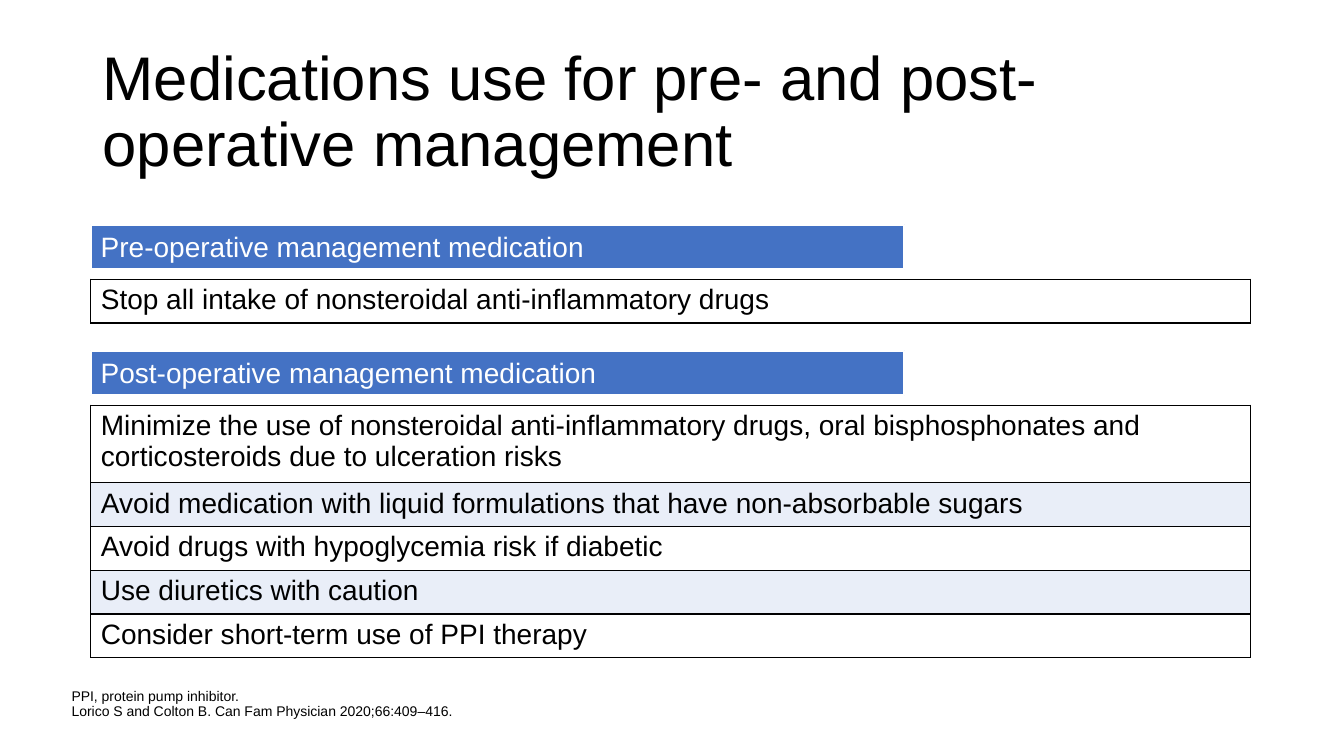
from copy import deepcopy

from lxml import etree
from pptx import Presentation
from pptx.dml.color import RGBColor
from pptx.enum.shapes import MSO_SHAPE
from pptx.enum.text import MSO_ANCHOR
from pptx.oxml.ns import qn
from pptx.util import Inches, Pt

RECTANGLE = MSO_SHAPE.RECTANGLE
TOP, MIDDLE, BOTTOM = MSO_ANCHOR.TOP, MSO_ANCHOR.MIDDLE, MSO_ANCHOR.BOTTOM
COLORS = {"black": "000000", "white": "FFFFFF", "header": "4472C4", "band": "E9EEF8"}
FONT = "Arial"
LEFT, WIDTH, HEADER_WIDTH = 0.9, 11.5, 8.07
HEADER_HEIGHT, TABLE_OFFSET = 0.44, 0.54
BORDER_SIDES = ("a:lnL", "a:lnR", "a:lnT", "a:lnB")

SECTIONS = [
    (2.23, "Pre-operative management medication", [
        (0.43, "Stop all intake of nonsteroidal anti-inflammatory drugs"),
    ]),
    (3.48, "Post-operative management medication", [
        (0.77, "Minimize the use of nonsteroidal anti-inflammatory drugs, "
               "oral bisphosphonates and corticosteroids due to ulceration risks"),
        (0.43, "Avoid medication with liquid formulations that have non-absorbable sugars"),
        (0.43, "Avoid drugs with hypoglycemia risk if diabetic"),
        (0.43, "Use diuretics with caution"),
        (0.43, "Consider short-term use of PPI therapy"),
    ]),
]


def rgb(name):
    """Return the named colour."""
    return RGBColor.from_string(COLORS[name])


def write(frame, text, size=20, color="black", spacing=None):
    """Fill a text frame with one formatted paragraph."""
    frame.word_wrap = True
    paragraph = frame.paragraphs[0]
    paragraph.text = text
    paragraph.line_spacing = spacing
    for run in paragraph.runs:
        run.font.size = Pt(size)
        run.font.name = FONT
        run.font.color.rgb = rgb(color)
    for line_break in paragraph._p.findall(qn("a:br")):
        line_break.append(deepcopy(paragraph.runs[0]._r.rPr))


def add_label(slide, box, text, size, anchor, inset=None):
    """Place a text box with tight line spacing."""
    frame = slide.shapes.add_textbox(*map(Inches, box)).text_frame
    frame.vertical_anchor = anchor
    if inset is not None:
        frame.margin_left = frame.margin_right = Inches(inset)
        frame.margin_top = frame.margin_bottom = Inches(inset)
    write(frame, text, size=size, spacing=0.9)


def add_header(slide, box, text):
    """Place the coloured bar that heads a section."""
    bar = slide.shapes.add_shape(RECTANGLE, *map(Inches, box))
    bar.shadow.inherit = False
    bar.fill.solid()
    bar.fill.fore_color.rgb = rgb("header")
    bar.line.color.rgb = rgb("white")
    bar.line.width = Pt(1.5)
    bar.text_frame.vertical_anchor = TOP
    write(bar.text_frame, text, color="white")
    bar.text_frame.paragraphs[0].alignment = 1


def add_borders(cell):
    """Draw a thin black line on each side of a cell."""
    properties = cell._tc.get_or_add_tcPr()
    for position, side in enumerate(BORDER_SIDES):
        line = etree.Element(qn(side), w=str(Pt(1)))
        fill = etree.SubElement(line, qn("a:solidFill"))
        etree.SubElement(fill, qn("a:srgbClr"), val=COLORS["black"])
        properties.insert(position, line)


def add_advice(slide, box, advice):
    """Place a one-column table of advice with alternate rows tinted."""
    table = slide.shapes.add_table(len(advice), 1, *map(Inches, box)).table
    table.first_row = table.horz_banding = False
    table.columns[0].width = Inches(box[2])
    for index, (height, text) in enumerate(advice):
        table.rows[index].height = Inches(height)
        cell = table.cell(index, 0)
        cell.fill.solid()
        cell.fill.fore_color.rgb = rgb("band" if index % 2 else "white")
        add_borders(cell)
        write(cell.text_frame, text)


def add_section(slide, top, title, advice):
    """Place a header bar and the advice table below it."""
    table_height = sum(height for height, _ in advice)
    add_advice(slide, (LEFT, top + TABLE_OFFSET, WIDTH, table_height), advice)
    add_header(slide, (LEFT, top, HEADER_WIDTH, HEADER_HEIGHT), title)


def main():
    """Build the medication slide and save it."""
    deck = Presentation()
    deck.slide_width, deck.slide_height = Inches(13.33), Inches(7.5)
    slide = deck.slides.add_slide(deck.slide_layouts[6])
    add_label(slide, (0.92, 0.4, 11.5, 1.45),
              "Medications use for pre- and post-operative management", 44, MIDDLE)
    for top, title, advice in SECTIONS:
        add_section(slide, top, title, advice)
    add_label(slide, (0.71, 6.79, 9.46, 0.35),
              "PPI, protein pump inhibitor.\n"
              "Lorico S and Colton B. Can Fam Physician 2020;66:409–416.", 10, BOTTOM, inset=0)
    deck.save("out.pptx")


if __name__ == "__main__":
    main()
